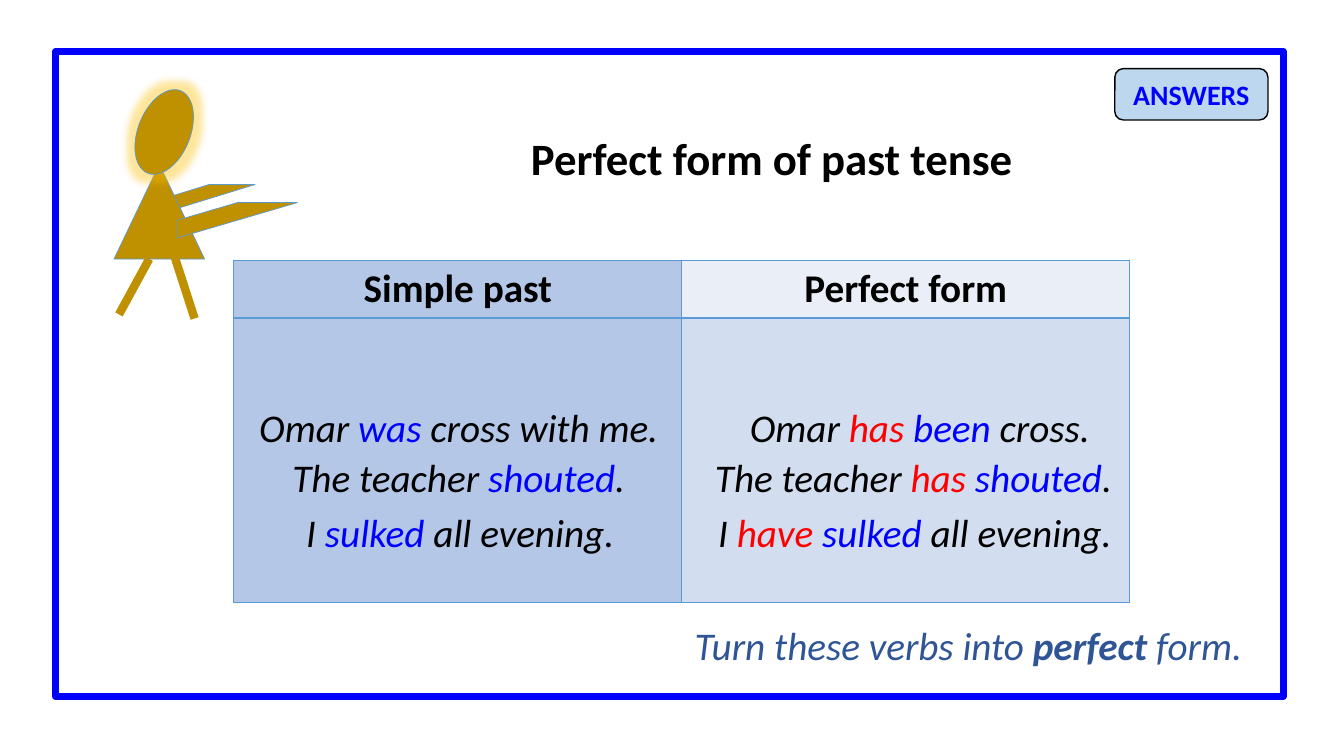
"""Build the answers slide on the perfect form of the past tense."""
import pptx
import pptx.util
import pptx.dml.color
import pptx.enum.shapes
import pptx.enum.text
import pptx.oxml
import pptx.oxml.ns

Pt = pptx.util.Pt
RGB = pptx.dml.color.RGBColor
SHAPE = pptx.enum.shapes.MSO_SHAPE
ALIGN = pptx.enum.text.PP_ALIGN
ANCHOR = pptx.enum.text.MSO_ANCHOR

BLACK = RGB(0x00, 0x00, 0x00)
BLUE = RGB(0x00, 0x00, 0xFF)
RED = RGB(0xFF, 0x00, 0x00)
NAVY = RGB(0x2F, 0x55, 0x97)
SKY = RGB(0xBD, 0xD7, 0xEE)
EDGE = RGB(0x5B, 0x9B, 0xD5)
SIMPLE_FILL = RGB(0xB4, 0xC7, 0xE7)
HEADER_FILL = RGB(0xEA, 0xEF, 0xF7)
PERFECT_FILL = RGB(0xD2, 0xDE, 0xEF)
GOLD = RGB(0xBF, 0x90, 0x00)
GLOW = RGB(0xFF, 0xC0, 0x00)

TITLE = "Perfect form of past tense "
BADGE = "ANSWERS"
PROMPT = [("Turn these verbs into ", False), ("perfect ", True), ("form.", False)]
HEADINGS = ["Simple past", "Perfect form"]
COLUMN_FILLS = [(SIMPLE_FILL, SIMPLE_FILL), (HEADER_FILL, PERFECT_FILL)]
SENTENCE_TOPS = [284.4, 320.4, 359.3]
SENTENCES = [
    [
        (327.6, [("Omar ", BLACK), ("was", BLUE), (" cross with me.", BLACK)]),
        (330.8, [("The teacher ", BLACK), ("shouted", BLUE), (". ", BLACK)]),
        (328.7, [("I ", BLACK), ("sulked", BLUE), (" all evening.", BLACK)]),
    ],
    [
        (657, [("Omar ", BLACK), ("has", RED), (" been", BLUE), (" cross.", BLACK)]),
        (655.6, [("The teacher ", BLACK), ("has", RED), (" shouted", BLUE), (". ", BLACK)]),
        (653.4, [("I ", BLACK), ("have", RED), (" sulked", BLUE), (" all evening.", BLACK)]),
    ],
]
SENTENCE_WIDTH, LINE_HEIGHT = 312, 41.2
FIGURE = [
    (SHAPE.DIAGONAL_STRIPE, (116.6, 131.8, 65.5, 20.2), 0),
    (SHAPE.ISOSCELES_TRIANGLE, (81.4, 117.4, 64.8, 67.7), 0),
    (SHAPE.OVAL, (98.6, 62.6, 37.4, 63.4), 21.6),
    (SHAPE.DIAGONAL_STRIPE, (126.7, 144.7, 85.7, 25.2), 0),
]
LEGS = [(106.6, 185, 85, 224.6), (124.6, 182.9, 139, 227.5)]


def points(values):
    return [Pt(value) for value in values]


def style(run, size, color, bold=False, italic=False):
    run.font.name = "Calibri"
    run.font.size = Pt(size)
    run.font.color.rgb = color
    run.font.bold = bold
    run.font.italic = italic


def add_part(slide, kind, box, fill, edge, weight):
    part = slide.shapes.add_shape(kind, *points(box))
    part.shadow.inherit = False
    if fill is None:
        part.fill.background()
    else:
        part.fill.solid()
        part.fill.fore_color.rgb = fill
    part.line.color.rgb = edge
    part.line.width = Pt(weight)
    return part


def add_line(slide, box, runs, align):
    line = slide.shapes.add_textbox(*points(box))
    line.text_frame.word_wrap = True
    paragraph = line.text_frame.paragraphs[0]
    paragraph.alignment = align
    for text, color, bold in runs:
        run = paragraph.add_run()
        run.text = text
        style(run, 28, color, bold, True)


def border_cell(cell):
    properties = cell._tc.get_or_add_tcPr()
    for index, side in enumerate(("lnL", "lnR", "lnT", "lnB")):
        properties.insert(index, pptx.oxml.parse_xml(
            f'<a:{side} {pptx.oxml.ns.nsdecls("a")} w="12700"><a:solidFill>'
            f'<a:srgbClr val="{EDGE}"/></a:solidFill></a:{side}>'))


def add_tense_table(slide):
    tenses = slide.shapes.add_table(2, 2, *points((167, 185.8, 640, 244.8))).table
    tenses.first_row = False
    tenses.horz_banding = False
    tenses.rows[0].height = Pt(41.4)
    tenses.rows[1].height = Pt(203.4)
    for column, (heading, fills) in enumerate(zip(HEADINGS, COLUMN_FILLS)):
        for row, fill in enumerate(fills):
            cell = tenses.cell(row, column)
            cell.fill.solid()
            cell.fill.fore_color.rgb = fill
            border_cell(cell)
        header = tenses.cell(0, column)
        header.text_frame.text = heading
        paragraph = header.text_frame.paragraphs[0]
        paragraph.alignment = ALIGN.CENTER
        style(paragraph.runs[0], 28, BLACK, bold=True)


def add_figure(slide):
    for kind, box, angle in FIGURE:
        part = add_part(slide, kind, box, GOLD, EDGE, 0.5)
        part.rotation = angle
        if kind == SHAPE.OVAL:
            effects = part._element.spPr.find(pptx.oxml.ns.qn("a:effectLst"))
            effects.append(pptx.oxml.parse_xml(
                f'<a:glow {pptx.oxml.ns.nsdecls("a")} rad="139700">'
                f'<a:srgbClr val="{GLOW}"><a:alpha val="40000"/></a:srgbClr></a:glow>'))
    for ends in LEGS:
        leg = slide.shapes.add_connector(
            pptx.enum.shapes.MSO_CONNECTOR.STRAIGHT, *points(ends))
        leg.line.color.rgb = GOLD
        leg.line.width = Pt(6)
        leg._element.spPr.append(pptx.oxml.parse_xml(
            f'<a:effectLst {pptx.oxml.ns.nsdecls("a")}/>'))


def main():
    deck = pptx.Presentation()
    deck.slide_width, deck.slide_height = Pt(960), Pt(540)
    slide = deck.slides.add_slide(deck.slide_layouts[5])

    add_part(slide, SHAPE.RECTANGLE, (39.6, 36.7, 877, 460.8), None, BLUE, 5)
    add_line(slide, (61.9, 439.9, 832.3, LINE_HEIGHT),
             [(text, NAVY, bold) for text, bold in PROMPT], ALIGN.RIGHT)
    add_tense_table(slide)
    for column in SENTENCES:
        for top, (centre, words) in zip(SENTENCE_TOPS, column):
            add_line(slide, (centre - SENTENCE_WIDTH / 2, top, SENTENCE_WIDTH, LINE_HEIGHT),
                     [(text, color, False) for text, color in words], ALIGN.CENTER)

    badge = add_part(slide, SHAPE.ROUNDED_RECTANGLE, (796.3, 49, 109.4, 36.7), SKY, BLACK, 1)
    badge.text_frame.text = BADGE
    badge.text_frame.vertical_anchor = ANCHOR.MIDDLE
    badge.text_frame.paragraphs[0].alignment = ALIGN.CENTER
    style(badge.text_frame.paragraphs[0].runs[0], 20, BLUE, bold=True)

    title = slide.shapes.title
    title.left, title.top, title.width, title.height = points((216, 90, 678.2, 46))
    title.text_frame.text = TITLE
    title.text_frame.auto_size = pptx.enum.text.MSO_AUTO_SIZE.NONE
    title.text_frame.vertical_anchor = ANCHOR.TOP
    title.text_frame.paragraphs[0].alignment = ALIGN.CENTER
    style(title.text_frame.paragraphs[0].runs[0], 32, BLACK, bold=True)

    add_figure(slide)
    deck.save("out.pptx")


if __name__ == "__main__":
    main()
